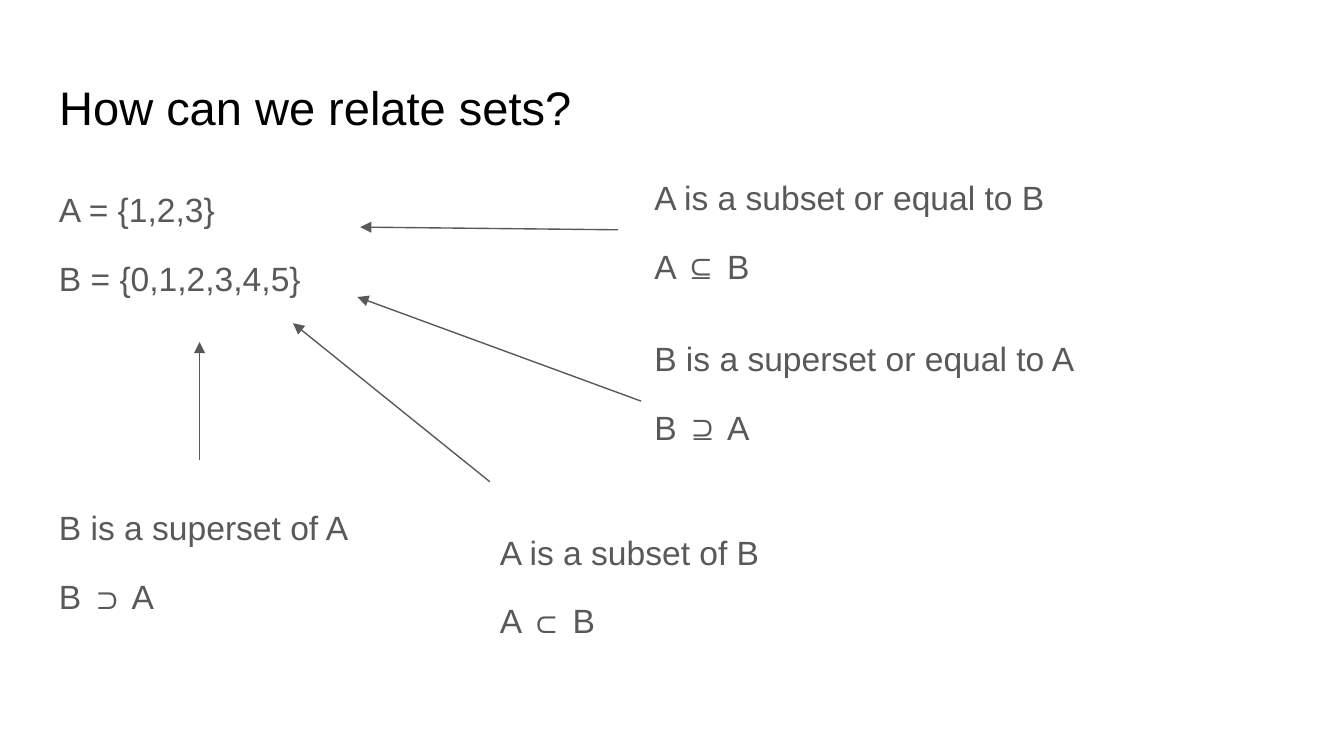
from lxml import etree
from pptx import Presentation
from pptx import util as u
from pptx.dml.color import RGBColor
from pptx.enum import shapes, text
from pptx.oxml.ns import qn

PX = 4572
GREY = "595959"
FRAME = dict(
    word_wrap=True,
    auto_size=text.MSO_AUTO_SIZE.NONE,
    vertical_anchor=text.MSO_ANCHOR.TOP,
    **{f"margin_{side}": 20 * PX for side in ("left", "top", "right", "bottom")},
)
LEFT = text.PP_ALIGN.LEFT
TITLE = dict(alignment=LEFT, line_spacing=1.0)
FIRST = dict(alignment=LEFT, line_spacing=1.15)
SECOND = dict(FIRST, space_before=u.Pt(12), space_after=u.Pt(12))


def px(*values):
    return [u.Emu(v * PX) for v in values]


def colour(code):
    return RGBColor.from_string(code)


def apply(target, values):
    for name, value in values.items():
        setattr(target, name, value)


def write(p, words, layout, size, code):
    apply(p, layout)
    r = p.add_run()
    r.text = words
    apply(r.font, dict(name="Arial", size=u.Pt(size)))
    r.font.color.rgb = colour(code)


def add_title(s, box, words):
    sp = s.shapes.title
    apply(sp, dict(zip(("left", "top", "width", "height"), px(*box))))
    apply(sp.text_frame, FRAME)
    write(sp.text_frame.paragraphs[0], words, TITLE, 25.2, "000000")


def add_pair(s, box, first, second):
    sp = s.shapes.add_textbox(*px(*box))
    tf = sp.text_frame
    apply(tf, FRAME)
    write(tf.paragraphs[0], first, FIRST, 18, GREY)
    write(tf.add_paragraph(), second, SECOND, 18, GREY)
    return sp


def add_arrow(s, start, end):
    cx = s.shapes.add_connector(shapes.MSO_CONNECTOR.STRAIGHT, *px(*start, *end))
    cx.line.color.rgb = colour(GREY)
    cx.line.width = u.Pt(0.75)
    etree.SubElement(cx.line._get_or_add_ln(), qn("a:tailEnd"), type="triangle")
    etree.SubElement(cx._element.spPr, qn("a:effectLst"))
    return cx


def main():
    prs = Presentation()
    prs.slide_width, prs.slide_height = px(2000, 1125)
    s = prs.slides.add_slide(prs.slide_layouts[5])
    add_title(s, (68, 97, 1864, 126), "How can we relate sets?")

    add_pair(s, (68, 252, 736, 228), "A = {1,2,3}", "B = {0,1,2,3,4,5}")
    add_pair(s, (954, 235, 828, 246), "A is a subset or equal to B", "A ⊆ B")
    add_pair(s, (724, 762, 656, 204), "A is a subset of B", "A ⊂ B")
    add_pair(s, (68, 726, 656, 204), "B is a superset of A", "B ⊃ A")
    superset_equal = add_pair(
        s, (954, 474, 828, 246), "B is a superset or equal to A", "B ⊇ A"
    )

    add_arrow(s, (297, 684), (297, 509))
    add_arrow(s, (920, 342), (536, 338))
    add_arrow(s, (729, 717), (436, 481))
    add_arrow(s, (954, 597), (532, 442)).begin_connect(superset_equal, 1)

    prs.save("out.pptx")


if __name__ == "__main__":
    main()
